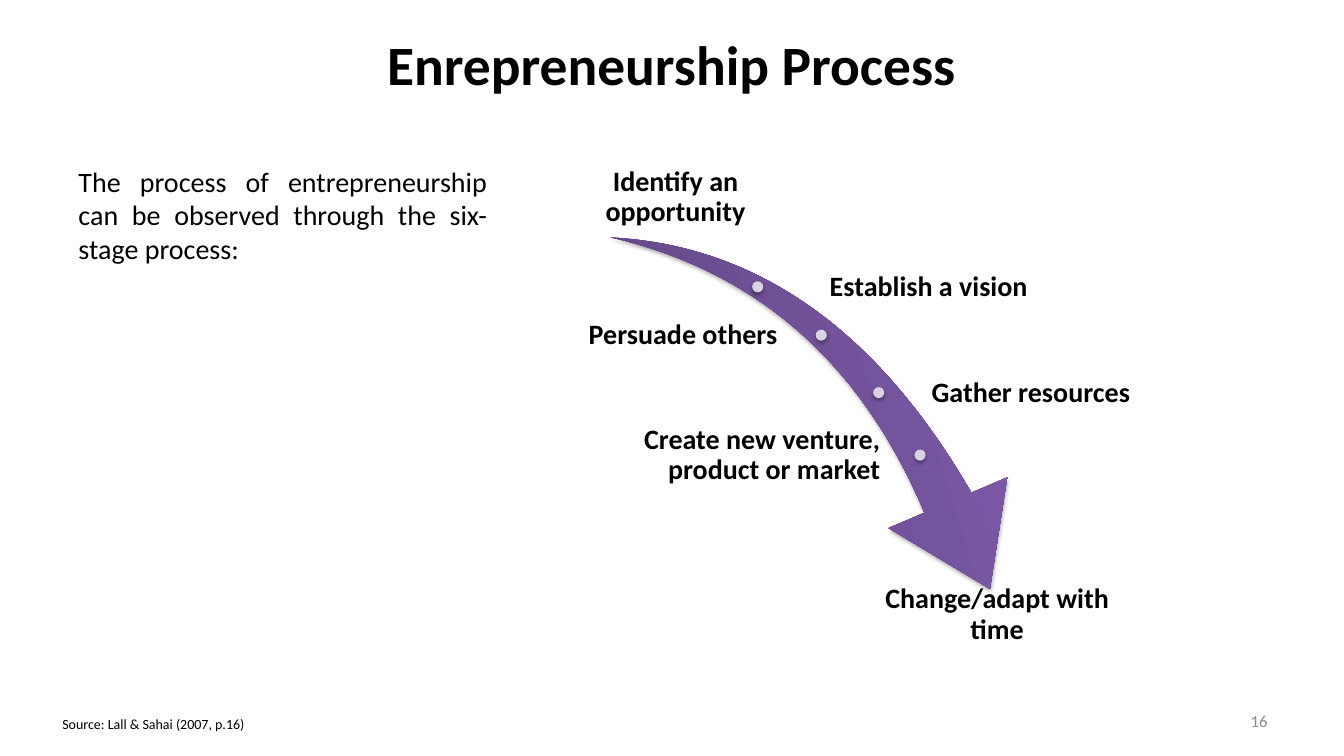
from copy import deepcopy

from lxml import etree
from pptx import Presentation
from pptx.dml.color import RGBColor
from pptx.enum import shapes, text
from pptx.oxml import ns
from pptx.util import Inches, Pt

BLACK = RGBColor(0x00, 0x00, 0x00)
GREY = RGBColor(0x8C, 0x8C, 0x8C)
DOT_LILAC = RGBColor(0xD8, 0xD3, 0xE0)
ARROW_STOPS = [
    (0, RGBColor(0x5F, 0x44, 0x80)),
    (0.8, RGBColor(0x7B, 0x58, 0xA6)),
    (1, RGBColor(0x7C, 0x57, 0xA8)),
]
FONT = "Calibri"
LEFT, CENTER, RIGHT, JUSTIFY = (
    text.PP_ALIGN.LEFT, text.PP_ALIGN.CENTER,
    text.PP_ALIGN.RIGHT, text.PP_ALIGN.JUSTIFY)
TOP, MIDDLE, BOTTOM = (
    text.MSO_ANCHOR.TOP, text.MSO_ANCHOR.MIDDLE, text.MSO_ANCHOR.BOTTOM)

DOT_SIZE = 0.11
DOTS = [(7.46, 2.79), (8.09, 3.27), (8.66, 3.84), (9.07, 4.46)]

# Wording, (left, top, width), alignment, anchor
STAGES = [
    ("Identify an opportunity", (5.66, 1.47, 2.08), CENTER, BOTTOM),
    ("Establish a vision", (8.2, 2.44, 3.1), LEFT, MIDDLE),
    ("Persuade others", (5.66, 2.92, 2.08), RIGHT, MIDDLE),
    ("Gather resources", (9.21, 3.49, 2.08), LEFT, MIDDLE),
    ("Create new venture, product or market", (5.66, 4.11, 3.1), RIGHT, MIDDLE),
    ("Change/adapt with time", (8.48, 5.77, 2.82), CENTER, TOP),
]
STAGE_HEIGHT = 0.82


def write(frame, wording, size, align, color=BLACK, bold=False, spacing=None):
    paragraph = frame.paragraphs[0]
    paragraph.alignment = align
    paragraph.line_spacing = spacing
    run = paragraph.add_run()
    run.text = wording
    look = {"name": FONT, "size": Pt(size), "bold": bold}
    for attribute, value in look.items():
        setattr(run.font, attribute, value)
    run.font.color.rgb = color


def add_label(slide, wording, box, size, align, anchor=TOP, inset=None,
              wrap=True, **style):
    frame = slide.shapes.add_textbox(*map(Inches, box)).text_frame
    settings = {"word_wrap": wrap, "vertical_anchor": anchor}
    if inset is not None:
        for side in ("left", "top", "right", "bottom"):
            settings[f"margin_{side}"] = Inches(inset)
    for attribute, value in settings.items():
        setattr(frame, attribute, value)
    write(frame, wording, size, align, **style)


def add_soft_shadow(shape):
    shape.shadow.inherit = False
    effects = shape.element.spPr.find(ns.qn("a:effectLst"))
    shadow = etree.SubElement(
        effects, ns.qn("a:outerShdw"), blurRad=str(Pt(3.1)), dist=str(Pt(1.8)),
        dir="5400000", rotWithShape="0")
    black = etree.SubElement(shadow, ns.qn("a:srgbClr"), val=str(BLACK))
    etree.SubElement(black, ns.qn("a:alpha"), val="35000")


def add_figure(slide, preset, box):
    figure = slide.shapes.add_shape(preset, *map(Inches, box))
    figure.line.fill.background()
    add_soft_shadow(figure)
    return figure


def add_process_arrow(slide):
    arrow = add_figure(slide, shapes.MSO_SHAPE.SWOOSH_ARROW,
                       (5.96, 2.49, 4.42, 3.08))
    arrow.rotation = 73.3
    arrow.adjustments[0] = 0.163
    arrow.adjustments[1] = 0.314
    arrow.fill.gradient()
    arrow.fill.gradient_angle = 90
    # The default gradient has two stops, so one more is needed
    stop_list = arrow.element.spPr.find(".//" + ns.qn("a:gsLst"))
    stop_list.append(deepcopy(stop_list[-1]))
    for stop, (position, color) in zip(arrow.fill.gradient_stops, ARROW_STOPS):
        stop.position = position
        stop.color.rgb = color


def add_dot(slide, left, top):
    dot = add_figure(slide, shapes.MSO_SHAPE.OVAL,
                     (left, top, DOT_SIZE, DOT_SIZE))
    dot.fill.solid()
    dot.fill.fore_color.rgb = DOT_LILAC


def set_title(slide, wording):
    title = slide.shapes.title
    place = {"left": 1.21, "top": 0.22, "width": 9.92, "height": 0.81}
    for attribute, value in place.items():
        setattr(title, attribute, Inches(value))
    # A wide left inset centres the heading on the slide
    title.text_frame.margin_left = Inches(1.08)
    title.text_frame.vertical_anchor = MIDDLE
    write(title.text_frame, wording, 39.6, CENTER, bold=True)


def main():
    deck = Presentation()
    deck.slide_width, deck.slide_height = Inches(13.33), Inches(7.5)
    slide = deck.slides.add_slide(deck.slide_layouts[5])

    # Heading and page number
    set_title(slide, "Enrepreneurship Process")
    add_label(slide, "16", (9.56, 6.95, 3.11, 0.4), 12, RIGHT, MIDDLE,
              color=GREY)

    # Process arrow with its stages
    add_process_arrow(slide)
    for left, top in DOTS:
        add_dot(slide, left, top)
    for wording, place, align, anchor in STAGES:
        add_label(slide, wording, (*place, STAGE_HEIGHT), 20, align, anchor,
                  inset=0.03, bold=True, spacing=0.9)

    # Introduction and source
    add_label(slide, "The process of entrepreneurship can be observed through "
              "the six-stage process:", (0.68, 1.58, 4.25, 1.11), 20, JUSTIFY)
    add_label(slide, "Source: Lall & Sahai (2007, p.16)",
              (0.52, 7.04, 2.04, 0.28), 10, JUSTIFY, wrap=False, spacing=1.07)

    deck.save("out.pptx")


if __name__ == "__main__":
    main()
